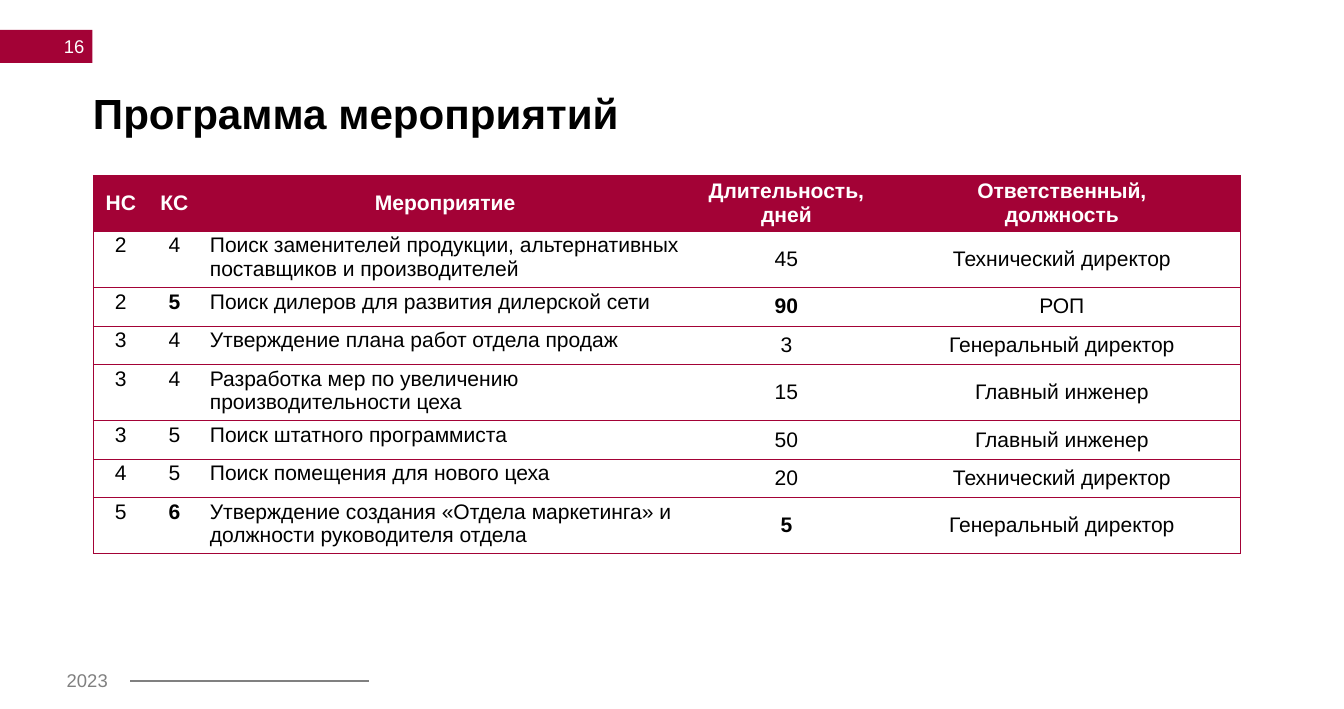
from lxml.etree import SubElement
from pptx import Presentation
from pptx.dml.color import RGBColor
from pptx.enum.shapes import MSO_CONNECTOR, MSO_SHAPE
from pptx.enum.text import MSO_ANCHOR, PP_ALIGN
from pptx.oxml.ns import qn
from pptx.util import Pt

FONT = "Arial"
CRIMSON, GRAY, BLACK, WHITE = "A30236", "808080", "000000", "FFFFFF"
PLAIN_TABLE = "{2D5ABB26-0587-4C30-8999-92F81FD0307C}"
COLUMNS = [41.8, 39.6, 371.5, 146.9, 271.4]
ONE_LINE, TWO_LINES = 29.3, 42.6
HEADER = ["НС", "КС", "Мероприятие", "Длительность,\nдней", "Ответственный,\nдолжность"]
ACTIVITIES = [
    ("2", "4", "Поиск заменителей продукции, альтернативных поставщиков и производителей",
     "45", "Технический директор"),
    ("2", "5", "Поиск дилеров для развития дилерской сети", "90", "РОП"),
    ("3", "4", "Утверждение плана работ отдела продаж", "3", "Генеральный директор"),
    ("3", "4", "Разработка мер по увеличению производительности цеха",
     "15", "Главный инженер"),
    ("3", "5", "Поиск штатного программиста", "50", "Главный инженер"),
    ("4", "5", "Поиск помещения для нового цеха", "20", "Технический директор"),
    ("5", "6", "Утверждение создания «Отдела маркетинга» и должности руководителя отдела",
     "5", "Генеральный директор"),
]
TALL_ROWS = {0, 1, 4, 7}
BOLD_CELLS = {(2, 1), (2, 3), (7, 1), (7, 3)}


def color(value):
    return RGBColor.from_string(value)


def write(tf, text, size, ink, bold=False, align=PP_ALIGN.LEFT, spacing=None):
    for i, line in enumerate(text.split("\n")):
        p = tf.paragraphs[0] if i == 0 else tf.add_paragraph()
        p.alignment = align
        p.line_spacing = spacing
        r = p.add_run()
        r.text = line
        r.font.name = FONT
        r.font.size = Pt(size)
        r.font.bold = bold
        r.font.color.rgb = color(ink)


def add_text(s, box, text, size, ink, anchor=MSO_ANCHOR.TOP, inset=None, **style):
    tf = s.shapes.add_textbox(*map(Pt, box)).text_frame
    tf.word_wrap = True
    tf.vertical_anchor = anchor
    if inset is not None:
        tf.margin_left = tf.margin_right = tf.margin_top = tf.margin_bottom = Pt(inset)
    write(tf, text, size, ink, **style)


def add_bar(s, box, fill):
    sp = s.shapes.add_shape(MSO_SHAPE.RECTANGLE, *map(Pt, box))
    sp.shadow.inherit = False
    sp.fill.solid()
    sp.fill.fore_color.rgb = color(fill)
    sp.line.fill.background()


def add_rule(s, x1, x2, y, ink, width):
    cx = s.shapes.add_connector(MSO_CONNECTOR.STRAIGHT, Pt(x1), Pt(y), Pt(x2), Pt(y))
    cx.line.color.rgb = color(ink)
    cx.line.width = Pt(width)
    SubElement(cx.element.spPr, qn("a:effectLst"))


def add_borders(cell, sides):
    tcPr = cell._tc.get_or_add_tcPr()
    for side in sides:
        ln = SubElement(tcPr, qn(f"a:ln{side}"), w=str(Pt(0.5)))
        fill = SubElement(ln, qn("a:solidFill"))
        SubElement(fill, qn("a:srgbClr"), val=CRIMSON)


def fill_cell(cell, row, col, text):
    header = row == 0
    left, right = col == 0, col == len(COLUMNS) - 1
    add_borders(cell, "L" * left + "R" * right + "TB")
    if header:
        cell.fill.solid()
        cell.fill.fore_color.rgb = color(CRIMSON)
    else:
        cell.fill.background()
    centred = header or col > 2
    cell.vertical_anchor = MSO_ANCHOR.MIDDLE if centred else MSO_ANCHOR.TOP
    cell.margin_top = cell.margin_bottom = Pt(2)
    write(cell.text_frame, text, 16, WHITE if header else BLACK,
          bold=header or (row, col) in BOLD_CELLS,
          align=PP_ALIGN.CENTER if header or col != 2 else PP_ALIGN.LEFT)


def add_activities(s, left, top):
    rows = [HEADER, *ACTIVITIES]
    heights = [TWO_LINES if i in TALL_ROWS else ONE_LINE for i in range(len(rows))]
    table = s.shapes.add_table(len(rows), len(COLUMNS), Pt(left), Pt(top),
                               Pt(sum(COLUMNS)), Pt(sum(heights))).table
    table.horz_banding = False
    table._tbl.tblPr.find(qn("a:tableStyleId")).text = PLAIN_TABLE
    for column, width in zip(table.columns, COLUMNS):
        column.width = Pt(width)
    for i, (values, height) in enumerate(zip(rows, heights)):
        table.rows[i].height = Pt(height)
        for j, value in enumerate(values):
            fill_cell(table.cell(i, j), i, j, value)


def main():
    prs = Presentation()
    prs.slide_width, prs.slide_height = Pt(1020.47), Pt(538.58)
    s = prs.slides.add_slide(prs.slide_layouts[6])
    add_bar(s, (0, 22.8, 70.2, 25), CRIMSON)
    add_text(s, (13, 20.6, 58.2, 29), "16", 14, WHITE,
             anchor=MSO_ANCHOR.MIDDLE, align=PP_ALIGN.RIGHT)
    add_text(s, (70.6, 70.6, 754, 56), "Программа мероприятий", 32, BLACK,
             inset=0, bold=True, spacing=0.9)
    add_activities(s, 70.8, 133.2)
    add_text(s, (43.6, 504.4, 48.2, 24.5), "2023", 14, GRAY)
    add_rule(s, 99, 280.2, 517.3, GRAY, 1.5)
    prs.save("out.pptx")


if __name__ == "__main__":
    main()
